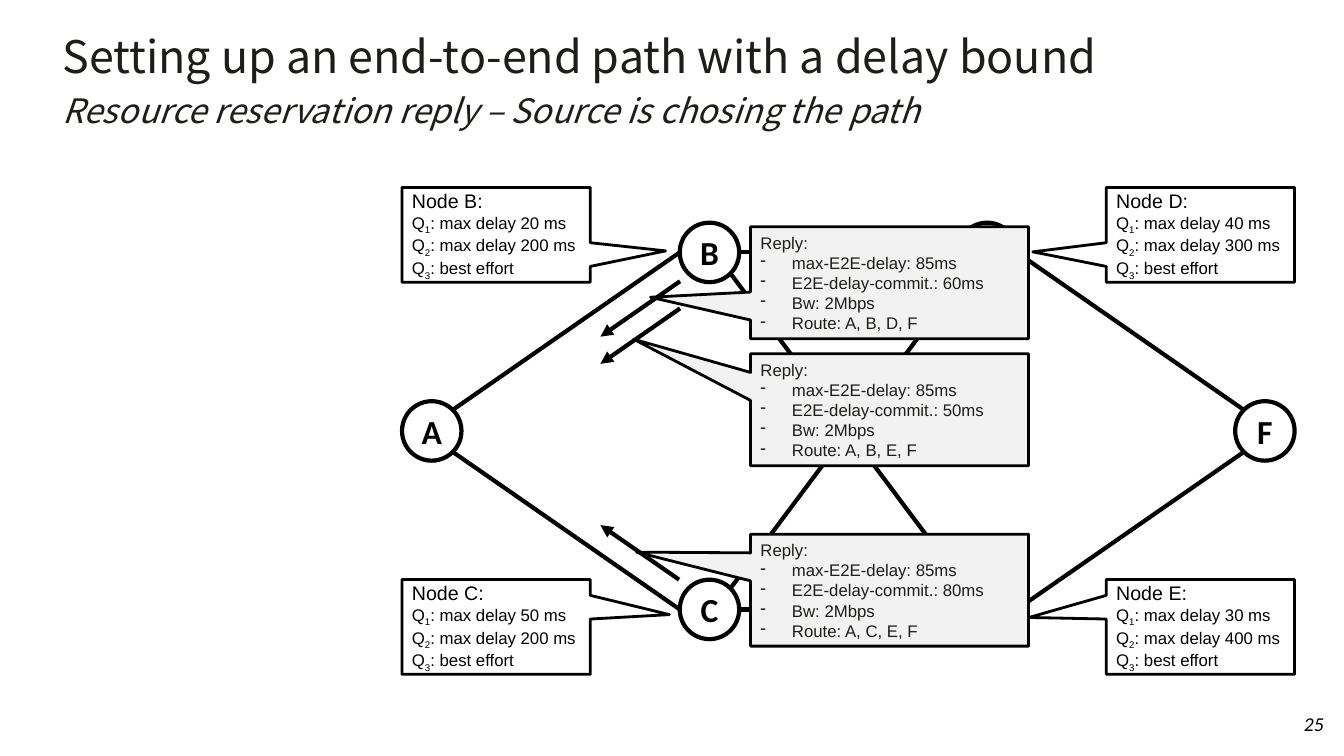
from dataclasses import dataclass
from math import hypot

from lxml.etree import SubElement
from pptx import Presentation
from pptx.dml.color import RGBColor
from pptx.enum.shapes import MSO_CONNECTOR, MSO_SHAPE
from pptx.enum.text import MSO_ANCHOR, MSO_AUTO_SIZE, PP_ALIGN
from pptx.oxml.ns import qn
from pptx.util import Pt


@dataclass(frozen=True)
class Theme:
    black: str = "000000"
    ink: str = "1D1D1A"
    white: str = "FFFFFF"
    pale: str = "F2F2F2"
    sans: str = "Arial"
    label: str = "Calibri"
    head: str = "Noto Sans CJK SC"
    title: int = 32
    large: int = 24
    name: int = 14
    small: int = 12
    thick: int = 3
    thin: int = 2


T = Theme()

NODES = {"A": (0, 0), "B": (1, -1), "C": (1, 1),
         "D": (2, -1), "E": (2, 1), "F": (3, 0)}

# from node, side it leaves (x, y), to node, side it enters (x, y)
LINKS = [
    ("B", (1, 1), "E", (-1, -1)),
    ("C", (1, 0), "E", (-1, 0)),
    ("E", (1, 0), "F", (-1, 1)),
    ("D", (1, 0), "F", (-1, -1)),
    ("C", (1, -1), "D", (-1, 1)),
    ("A", (1, -1), "B", (-1, 0)),
    ("A", (1, 1), "C", (-1, 0)),
    ("B", (1, 0), "D", (-1, 0)),
]

# node, column, row, pointer, delays of Q1 and Q2 in ms
NOTES = [
    ("B", 0, 0, (0.9, 0.17), (20, 200)),
    ("D", 1, 0, (-0.89, 0.18), (40, 300)),
    ("C", 0, 1, (0.92, -0.13), (50, 200)),
    ("E", 1, 1, (-0.91, -0.1), (30, 400)),
]

# top, pointer, committed delay in ms, route
REPLIES = [
    (118.8, (-0.92, -0.63), 50, "A, B, E, F"),
    (247.7, (-0.91, -0.34), 80, "A, C, E, F"),
    (28.1, (-0.86, 0.13), 60, "A, B, D, F"),
]

# tail and tip
ARROWS = [
    ((198.7, 67), (141.8, 106.6)),
    ((198.7, 86.4), (141.8, 126)),
    ((198, 280.1), (141.8, 241.2)),
]


def write(para, text, font=T.sans, size=T.small, color=T.black,
          bold=False, italic=False, base=0):
    run = para.add_run()
    run.text = text
    face = run.font
    face.name, face.size = font, Pt(size)
    face.bold, face.italic = bold, italic
    face.color.rgb = RGBColor.from_string(color)
    if base:
        run._r.get_or_add_rPr().set("baseline", str(base * 1000))


def wire(slide, start, end, arrow=False):
    line = slide.shapes.add_connector(
        MSO_CONNECTOR.STRAIGHT, *(Pt(v) for v in (*start, *end)))
    line.line.width = Pt(T.thick)
    line.line.color.rgb = RGBColor.from_string(T.black)
    if arrow:
        SubElement(line.line._get_or_add_ln(), qn("a:tailEnd"), type="triangle")
    SubElement(line._element.spPr, qn("a:effectLst"))


def block(slide, kind, box, fill, width):
    shape = slide.shapes.add_shape(kind, *map(Pt, box))
    shape.shadow.inherit = False
    shape.fill.solid()
    shape.fill.fore_color.rgb = RGBColor.from_string(fill)
    shape.line.color.rgb = RGBColor.from_string(T.black)
    shape.line.width = Pt(width)
    shape.text_frame.vertical_anchor = MSO_ANCHOR.MIDDLE
    return shape


def bubble(slide, box, tip, fill, count):
    """Draw a callout and return its left-aligned paragraphs."""
    shape = block(slide, MSO_SHAPE.RECTANGULAR_CALLOUT, box, fill, T.thin)
    shape.adjustments[0], shape.adjustments[1] = tip
    frame = shape.text_frame
    frame.word_wrap = True
    paras = [frame.paragraphs[0]]
    paras += [frame.add_paragraph() for _ in range(count - 1)]
    for para in paras:
        para.alignment = PP_ALIGN.LEFT
    return paras


def note(slide, box, tip, node, delays):
    rows = [f"max delay {ms} ms" for ms in delays] + ["best effort"]
    head, *paras = bubble(slide, box, tip, T.white, len(rows) + 1)
    write(head, f"Node {node}:", size=T.name)
    for rank, (para, row) in enumerate(zip(paras, rows), 1):
        write(para, "Q")
        write(para, str(rank), base=-25)
        write(para, f": {row}")


def reply(slide, box, tip, delay, route):
    rows = ["max-E2E-delay: 85ms", f"E2E-delay-commit.: {delay}ms",
            "Bw: 2Mbps", f"Route: {route}"]
    head, *paras = bubble(slide, box, tip, T.pale, len(rows) + 1)
    write(head, "Reply:", color=T.ink)
    for para, row in zip(paras, rows):
        props = para._p.get_or_add_pPr()
        props.set("marL", str(Pt(22.5)))
        props.set("indent", str(-Pt(22.5)))
        SubElement(props, qn("a:buChar"), char="-")
        write(para, row, color=T.ink)


def network(slide, box):
    x, y, w, h = box
    size, rise = 42.5, 127.5
    step = (w - size) / 3
    spots = {name: (x + size / 2 + col * step, y + h / 2 + row * rise)
             for name, (col, row) in NODES.items()}

    def port(name, side):
        reach = size / 2 / hypot(*side)
        return [mid + reach * way for mid, way in zip(spots[name], side)]

    for start, out, end, into in LINKS:
        wire(slide, port(start, out), port(end, into))
    for name, (cx, cy) in spots.items():
        disc = block(slide, MSO_SHAPE.OVAL,
                     (cx - size / 2, cy - size / 2, size, size), T.white, T.thick)
        frame = disc.text_frame
        frame.margin_left = frame.margin_right = 0
        if name != "D":
            para = frame.paragraphs[0]
            para.alignment = PP_ALIGN.CENTER
            write(para, name, font=T.label, size=T.large, bold=True)


def notes(slide, box):
    x, y, w, h = box
    wide, high = 134.6, 67.7
    for node, col, row, tip, delays in NOTES:
        place = (x + col * (w - wide), y + row * (h - high), wide, high)
        note(slide, place, tip, node, delays)


def replies(slide, box):
    """Place the replies and arrows, with the top reply in front."""
    x, y = box[:2]

    def put(top, *rest):
        reply(slide, (x + 249.1, y + top, 198.7, 79.9), *rest)

    for item in REPLIES[:-1]:
        put(*item)
    for tail, tip in ARROWS:
        wire(slide, (x + tail[0], y + tail[1]), (x + tip[0], y + tip[1]), arrow=True)
    put(*REPLIES[-1])


def title(slide, box):
    shape = slide.shapes.title
    shape.left, shape.top, shape.width, shape.height = map(Pt, box)
    frame = shape.text_frame
    frame.auto_size = MSO_AUTO_SIZE.NONE
    frame.vertical_anchor = MSO_ANCHOR.TOP
    first, second = frame.paragraphs[0], frame.add_paragraph()
    for para in (first, second):
        para.alignment = PP_ALIGN.LEFT
        para.line_spacing = Pt(34.4)
        para.space_before = Pt(0)
    write(first, "Setting up an end-to-end path with a delay bound",
          font=T.head, size=T.title, color=T.ink)
    write(second, "Resource reservation reply – Source is chosing the path",
          font=T.head, size=T.large, color=T.ink, italic=True)


def number(slide, box):
    frame = slide.shapes.add_textbox(*map(Pt, box)).text_frame
    frame.word_wrap = True
    frame.vertical_anchor = MSO_ANCHOR.BOTTOM
    frame.margin_left = frame.margin_top = 0
    frame.margin_right = frame.margin_bottom = Pt(14.4)
    para = frame.paragraphs[0]
    para.alignment = PP_ALIGN.RIGHT
    para.line_spacing = 0.85
    write(para, "25", font=T.label, size=T.name, italic=True)


def main():
    deck = Presentation()
    deck.slide_width, deck.slide_height = Pt(960.5), Pt(540)
    slide = deck.slides.add_slide(deck.slide_layouts[5])
    field = (287.3, 133.9, 637.9, 347.8)
    title(slide, (37.4, 20.9, 882, 72.7))
    network(slide, field)
    notes(slide, field)
    replies(slide, field)
    number(slide, (895.7, 511.2, 64.8, 28.8))
    deck.save("out.pptx")


if __name__ == "__main__":
    main()
